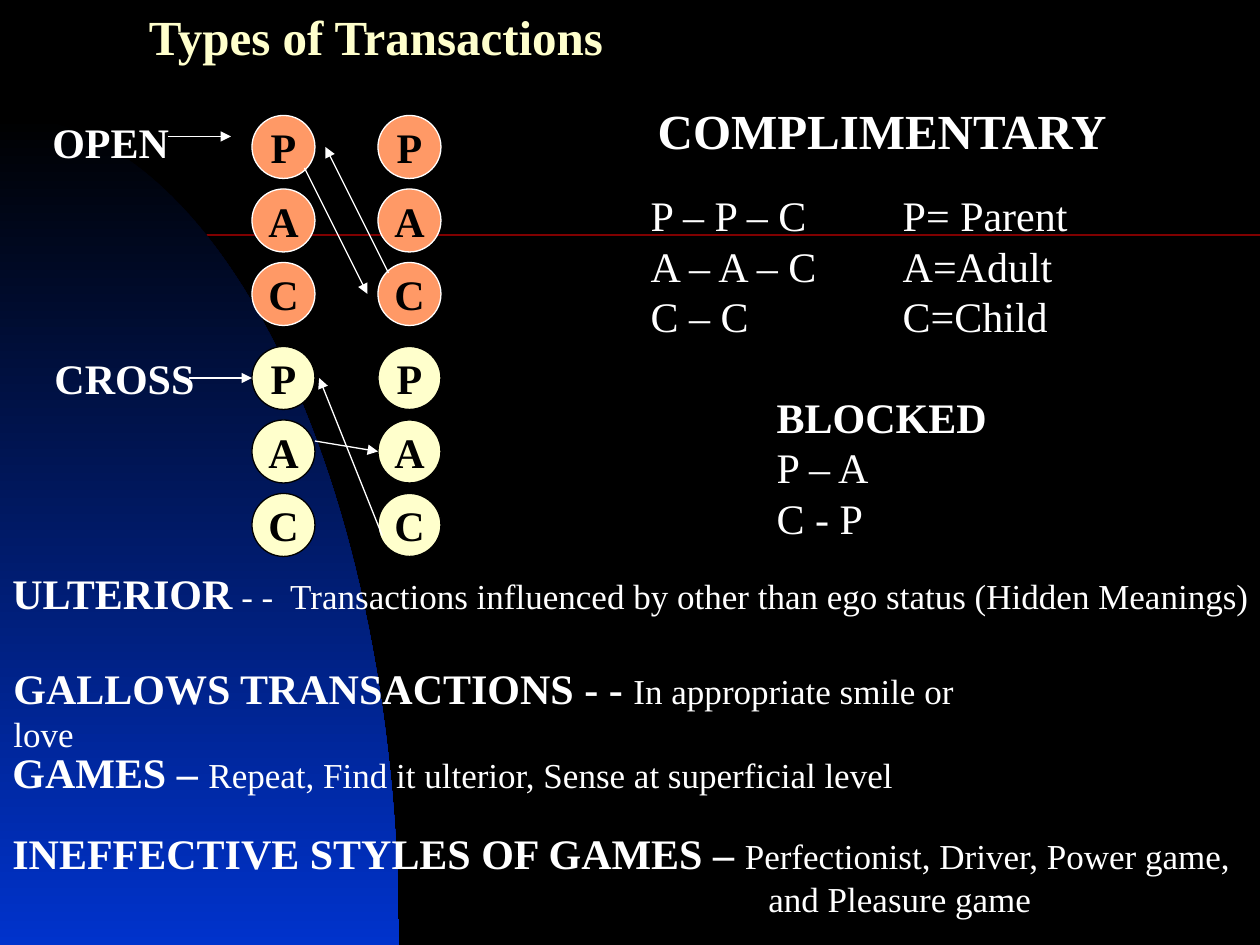
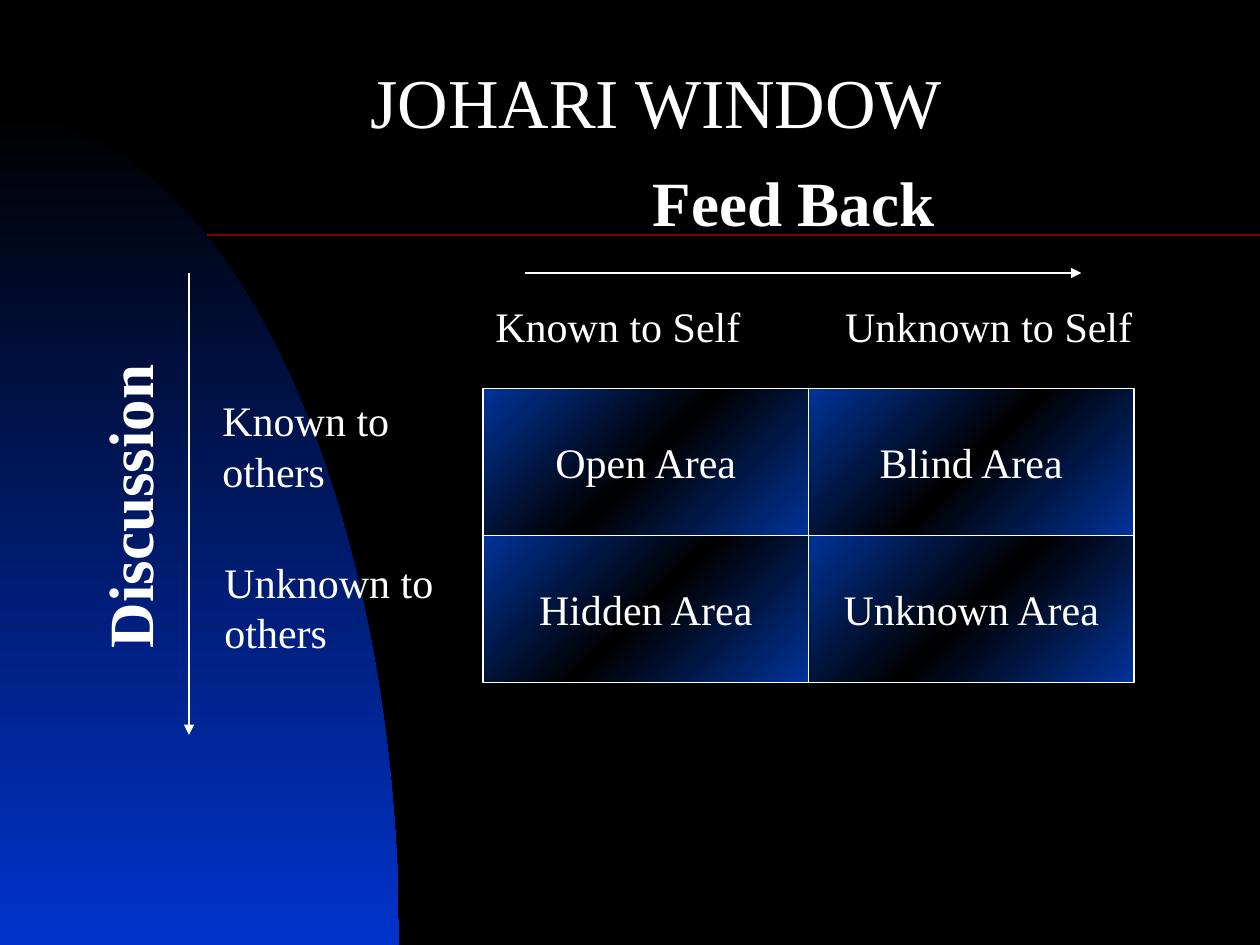
import math

import pptx
import pptx.dml.color
import pptx.enum.shapes
import pptx.enum.text
import pptx.oxml
import pptx.oxml.ns
import pptx.util

RGBColor = pptx.dml.color.RGBColor
ALIGN = pptx.enum.text.PP_ALIGN
SHAPE = pptx.enum.shapes.MSO_SHAPE
qn = pptx.oxml.ns.qn

# Shared look; every length is in grid cells, twelve to the inch
COLUMNS, ROWS = 120, 90
FONT = "Times New Roman"
BLACK = RGBColor(0x00, 0x00, 0x00)
WHITE = RGBColor(0xFF, 0xFF, 0xFF)
CREAM = RGBColor(0xFF, 0xFF, 0xCC)
ORANGE = RGBColor(0xFF, 0x99, 0x66)
MAROON = RGBColor(0x80, 0x00, 0x00)
BLUE = RGBColor(0x00, 0x33, 0xCC)
NAVY = RGBColor(0x00, 0x33, 0x99)
RULE_ROW = 22.4
CURVE = {"top": 11, "width": 38, "steps": 60}
BODY = {"size": 24}
BOLD = {"size": 24, "bold": True}
SMALL = {"size": 20}
HEAD = {"size": 28, "bold": True}
AXIS = {"size": 36, "bold": True}

# Slide 1: ego states, (top, fill, outline) for each group
EGO_STATES = ["P", "A", "C"]
EGO_GROUPS = [(11, ORANGE, WHITE), (33, CREAM, BLACK)]
EGO_COLUMNS = [24, 36]
EGO_SIZE, EGO_PITCH = 6, 7
TRANSACTION_ARROWS = [
    (16, 13, 22, 13), (18, 36, 24, 36),
    (37, 26, 31, 14), (29, 16, 35, 28),
    (30, 42, 36, 43), (36.4, 51, 30.4, 36),
]

# Text entries: (left, top, width, height), paragraphs, settings
# A paragraph is a list of (text, format) spans
TRANSACTION_TEXTS = [
    ((13, 0, 46.4, 6.8),
     [[("Types of Transactions", {**HEAD, "color": CREAM})]], {}),
    ((3.8, 10.5, 13.6, 6), [[("OPEN", BOLD)]], {}),
    ((4, 33, 15.7, 6), [[("CROSS", BOLD)]], {}),
    ((61, 9, 46, 6.8), [[("COMPLIMENTARY", HEAD)]],
     {"wrap": True, "align": ALIGN.CENTER}),
    ((60.8, 17.5, 43, 39.6),
     [[("P – P – C\tP= Parent", BODY)],
      [("A – A – C\tA=Adult", BODY)],
      [("C – C\tC=Child", BODY)],
      [("BLOCKED", BOLD)],
      [("P – A", BODY)],
      [("C - P", BODY)]],
     {"tab": 24, "indents": {3: 12, 4: 12, 5: 12}, "gaps": {3: 28.8}}),
    ((0, 53.5, 120.5, 6),
     [[("ULTERIOR", BOLD),
       (" - -  Transactions influenced by other than ego status "
        "(Hidden Meanings)", SMALL)]], {}),
    ((0.1, 62.5, 98.5, 6),
     [[("GALLOWS TRANSACTIONS - - ", BOLD),
       ("In appropriate smile or love", SMALL)]], {}),
    ((0, 70.5, 87, 6),
     [[("GAMES – ", BOLD),
       ("Repeat, Find it ulterior, Sense at superficial level", SMALL)]], {}),
    ((0, 78.2, 119.4, 10),
     [[("INEFFECTIVE STYLES OF GAMES – ", BOLD),
       ("Perfectionist, Driver, Power game,", SMALL)],
      [("and Pleasure game", SMALL)]], {"indents": {1: 72}}),
]

# Slide 2: Johari window
AREAS = [["Open Area", "Blind Area"], ["Hidden Area", "Unknown Area"]]
AREA_LEFT, AREA_TOP, AREA_WIDTH, AREA_HEIGHT = 46, 37, 31, 14
JOHARI_ARROWS = [(18, 26, 18, 70), (50, 26, 103, 26)]
JOHARI_TEXTS = [
    ((20, 37, 19.3, 10.8), [[("Known to", BODY)], [("others", BODY)]], {}),
    ((20.2, 52.4, 23.3, 10.8), [[("Unknown to", BODY)], [("others", BODY)]], {}),
    ((-4.3, 42.2, 33, 8.4), [[("Discussion", AXIS)]],
     {"wrap": True, "rotation": 270}),
    ((61, 15, 29.3, 8.4), [[("Feed Back", AXIS)]], {}),
    ((46, 28, 29, 6), [[("Known to Self", BODY)]], {"wrap": True}),
    ((77, 28, 32, 6), [[("Unknown to Self", BODY)]],
     {"wrap": True, "align": ALIGN.RIGHT}),
    ((18.5, 5, 88, 9.2), [[("JOHARI WINDOW", {"size": 40})]],
     {"wrap": True, "align": ALIGN.CENTER}),
]


def cells(*lengths):
    return [pptx.util.Inches(length / 12) for length in lengths]


def add_span(para, text, look):
    span = para.add_run()
    span.text = text
    settings = {"name": FONT, "size": pptx.util.Pt(look["size"]),
                "bold": look.get("bold", False)}
    for name, value in settings.items():
        setattr(span.font, name, value)
    span.font.color.rgb = look.get("color", WHITE)


def add_text(page, place, paragraphs, settings):
    box = page.shapes.add_textbox(*cells(*place))
    box.rotation = settings.get("rotation", 0)
    frame = box.text_frame
    frame.word_wrap = settings.get("wrap", False)
    frame.auto_size = pptx.enum.text.MSO_AUTO_SIZE.SHAPE_TO_FIT_TEXT
    for index, spans in enumerate(paragraphs):
        para = frame.paragraphs[0] if index == 0 else frame.add_paragraph()
        para.alignment = settings.get("align", ALIGN.LEFT)
        properties = para._p.get_or_add_pPr()
        if index in settings.get("indents", {}):
            properties.set("marL", str(cells(settings["indents"][index])[0]))
            properties.set("indent", "0")
        elif "tab" in settings:
            tabs = pptx.oxml.parse_xml(
                '<a:tabLst xmlns:a="%s"><a:tab pos="%d" algn="l"/></a:tabLst>'
                % (pptx.oxml.ns.nsdecls("a").split('"')[1],
                   cells(settings["tab"])[0]))
            properties.append(tabs)
        if index in settings.get("gaps", {}):
            para.space_before = pptx.util.Pt(settings["gaps"][index])
        for text, look in spans:
            add_span(para, text, look)


def add_line(page, ends, color=WHITE, width=0.75, arrow=True):
    line = page.shapes.add_connector(
        pptx.enum.shapes.MSO_CONNECTOR.STRAIGHT, *cells(*ends))
    line.line.color.rgb = color
    line.line.width = pptx.util.Pt(width)
    if arrow:
        outline = line.line._get_or_add_ln()
        outline.append(outline.makeelement(qn("a:tailEnd"), {"type": "triangle"}))
    properties = line._element.spPr
    properties.append(properties.makeelement(qn("a:effectLst"), {}))


def fill_gradient(shape, colors, angle):
    """Spread the colours evenly; the angle runs clockwise."""
    shape.fill.gradient()
    shape.fill.gradient_angle = 360 - angle
    stops = shape._element.spPr.find(".//" + qn("a:gsLst"))
    for stop in list(stops):
        stops.remove(stop)
    for index, color in enumerate(colors):
        position = round(100000 * index / (len(colors) - 1))
        stop = stops.makeelement(qn("a:gs"), {"pos": str(position)})
        stop.append(stop.makeelement(qn("a:srgbClr"), {"val": str(color)}))
        stops.append(stop)


def add_labelled(page, kind, place, label, look, outline):
    shape = page.shapes.add_shape(kind, *cells(*place))
    shape.shadow.inherit = False
    shape.line.color.rgb = outline
    shape.line.width = pptx.util.Pt(0.75)
    frame = shape.text_frame
    frame.word_wrap = False
    frame.vertical_anchor = pptx.enum.text.MSO_ANCHOR.MIDDLE
    frame.paragraphs[0].alignment = ALIGN.CENTER
    add_span(frame.paragraphs[0], label, look)
    return shape


def add_page(deck):
    """Black page with the maroon rule and the blue quarter ellipse."""
    page = deck.slides.add_slide(deck.slide_layouts[6])
    page.background.fill.solid()
    page.background.fill.fore_color.rgb = BLACK
    add_line(page, (0, RULE_ROW, COLUMNS, RULE_ROW), MAROON, 1, arrow=False)
    height, steps = ROWS - CURVE["top"], CURVE["steps"]
    angles = [math.pi / 2 * step / steps for step in range(steps + 1)]
    arc = [cells(CURVE["width"] * math.sin(angle), ROWS - height * math.cos(angle))
           for angle in angles]
    builder = page.shapes.build_freeform(*arc[0])
    builder.add_line_segments(arc[1:] + [cells(0, ROWS)], close=True)
    curve = builder.convert_to_shape()
    curve.shadow.inherit = False
    curve.line.fill.background()
    fill_gradient(curve, [BLACK, BLUE], 90)
    return page


def add_transactions(deck):
    page = add_page(deck)
    for top, fill, outline in EGO_GROUPS:
        for row, state in enumerate(EGO_STATES):
            for left in EGO_COLUMNS:
                place = (left, top + row * EGO_PITCH, EGO_SIZE, EGO_SIZE)
                circle = add_labelled(page, SHAPE.OVAL, place, state,
                                      {**BOLD, "color": BLACK}, outline)
                circle.fill.solid()
                circle.fill.fore_color.rgb = fill
    return page, TRANSACTION_ARROWS, TRANSACTION_TEXTS


def add_johari(deck):
    page = add_page(deck)
    for row, names in enumerate(AREAS):
        for column, name in enumerate(names):
            place = (AREA_LEFT + column * AREA_WIDTH, AREA_TOP + row * AREA_HEIGHT,
                     AREA_WIDTH, AREA_HEIGHT)
            area = add_labelled(page, SHAPE.RECTANGLE, place, name, BODY, WHITE)
            fill_gradient(area, [NAVY, BLACK, NAVY], 45)
    return page, JOHARI_ARROWS, JOHARI_TEXTS


def main():
    deck = pptx.Presentation()
    deck.slide_width, deck.slide_height = cells(COLUMNS, ROWS)
    for add_diagram in (add_transactions, add_johari):
        page, arrows, texts = add_diagram(deck)
        for ends in arrows:
            add_line(page, ends)
        for place, paragraphs, settings in texts:
            add_text(page, place, paragraphs, settings)
    deck.save("out.pptx")


if __name__ == "__main__":
    main()
